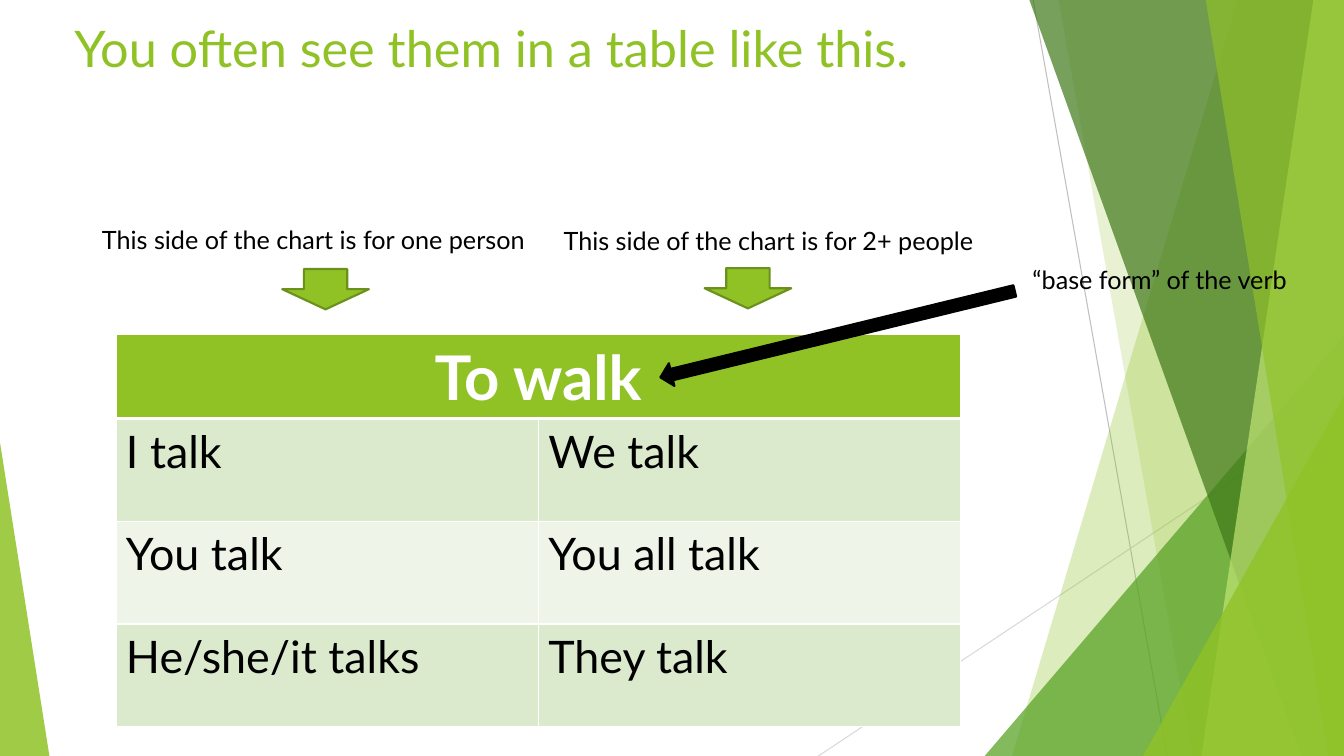
from lxml.etree import SubElement
from pptx import Presentation
from pptx.dml.color import RGBColor
from pptx.enum.shapes import MSO_CONNECTOR, MSO_SHAPE
from pptx.enum.text import PP_ALIGN
from pptx.oxml.ns import qn
from pptx.util import Pt

WHITE = RGBColor(0xFF, 0xFF, 0xFF)
BLACK = RGBColor(0, 0, 0)
LIME = RGBColor(0x90, 0xC2, 0x26)
PALE_LIME = RGBColor(0xC0, 0xE4, 0x74)
GREEN = RGBColor(0x54, 0xA0, 0x21)
DARK = RGBColor(0x3F, 0x78, 0x19)
EDGE = RGBColor(0x6B, 0x90, 0x1C)
BAND = RGBColor(0xDB, 0xE9, 0xCD)
LIGHT = RGBColor(0xEE, 0xF4, 0xE8)
GRAY = RGBColor(0xBF, 0xBF, 0xBF)
SILVER = RGBColor(0xD9, 0xD9, 0xD9)

FONT = "Lato"
WIDE, HIGH = 960, 540
TOP = -0.6  # the facets start just above the slide

TITLE = "You often see them in a table like this."
VERB = "To walk"
FORMS = [
    ("I talk", "We talk"),
    ("You talk", "You all talk"),
    ("He/she/it talks", "They talk"),
]
TABLE_X, TABLE_Y, COL_W, HEAD_H, ROW_H = 82.8, 239, 301.7, 60, 73.4

# text, left, top, width
LABELS = [
    ("“base form” of the verb", 722.9, 185, 211),
    ("This side of the chart is for one person", 59, 157, 329.8),
    ("This side of the chart is for 2+ people", 388.8, 157.7, 320.4),
]
# preset, left, top, width, height, turn, fill, line
ARROWS = [
    (MSO_SHAPE.LEFT_ARROW, 468, 230.4, 260.6, 16.6, -13.7, BLACK, BLACK),
    (MSO_SHAPE.DOWN_ARROW, 503.3, 191.5, 61.9, 28.8, 0, LIME, EDGE),
    (MSO_SHAPE.DOWN_ARROW, 201.6, 192.2, 61.9, 28.8, 0, LIME, EDGE),
]
RAYS = [(738, 0, 833.8, HIGH, GRAY), (WIDE, 290.2, 584.6, HIGH, SILVER)]
# Back to front. Facet: top x, bottom x, colour, opacity (reaches the right edge).
# Triangle: left, top, width, apex, colour, opacity (reaches the bottom edge).
DECOR = [
    (884.2, 722.9, LIME, 30),
    (756, 851.8, LIME, 20),
    (703.4, 239.8, 256.6, 1, GREEN, 72),
    (735.1, 929.5, DARK, 70),
    (938.2, 858.2, PALE_LIME, 70),
    (861.1, 949, LIME, 65),
    (816.5, 283, 143.5, 1, LIME, 80),
    (0, 316.1, 35.3, 0, LIME, 85),
]


def paint(shape, color, alpha=100):
    shape.shadow.inherit = False
    shape.fill.solid()
    shape.fill.fore_color.rgb = color
    if alpha < 100:
        tint = shape.fill._xPr.find(qn("a:solidFill"))[0]
        SubElement(tint, qn("a:alpha"), val=str(alpha * 1000))


def facet(top_x, low_x, color, alpha):
    pen = shapes.build_freeform(Pt(top_x), Pt(TOP))
    pen.add_line_segments(
        [(Pt(x), Pt(y)) for x, y in [(WIDE, TOP), (WIDE, HIGH), (low_x, HIGH)]])
    shape = pen.convert_to_shape()
    paint(shape, color, alpha)
    shape.line.fill.background()


def corner(x, y, w, apex, color, alpha):
    shape = shapes.add_shape(
        MSO_SHAPE.ISOSCELES_TRIANGLE, Pt(x), Pt(y), Pt(w), Pt(HIGH - y))
    shape.adjustments[0] = apex
    paint(shape, color, alpha)
    shape.line.fill.background()


def write(frame, text, size, color, align=PP_ALIGN.LEFT, bold=False):
    para = frame.paragraphs[0]
    para.text = text
    para.alignment = align
    font = para.font
    font.name, font.size, font.bold = FONT, Pt(size), bold
    font.color.rgb = color


def add_text(text, x, y, w, h, size, color, align, wrap):
    frame = shapes.add_textbox(Pt(x), Pt(y), Pt(w), Pt(h)).text_frame
    frame.word_wrap = wrap
    write(frame, text, size, color, align)


def style(cell, fill, top, bottom):
    """Give a cell white borders, then its fill."""
    props = cell._tc.get_or_add_tcPr()
    for side, width in [("L", 1), ("R", 1), ("T", top), ("B", bottom)]:
        line = SubElement(props, qn("a:ln" + side), w=str(Pt(width)))
        SubElement(SubElement(line, qn("a:solidFill")), qn("a:srgbClr"), val=str(WHITE))
    cell.fill.solid()
    cell.fill.fore_color.rgb = fill


def add_forms():
    rows = len(FORMS) + 1
    table = shapes.add_table(
        rows, 2, Pt(TABLE_X), Pt(TABLE_Y), Pt(2 * COL_W),
        Pt(HEAD_H + len(FORMS) * ROW_H)).table
    table.horz_banding = False
    for col in table.columns:
        col.width = Pt(COL_W)
    for r, row in enumerate(table.rows):
        row.height = Pt(ROW_H if r else HEAD_H)
        fill = (BAND if r % 2 else LIGHT) if r else LIME
        for c, cell in enumerate(row.cells):
            style(cell, fill, 3 if r == 1 else 1, 1 if r else 3)
            if r:
                write(cell.text_frame, FORMS[r - 1][c], 32, BLACK)
    head = table.cell(0, 0)
    head.merge(table.cell(0, 1))
    write(head.text_frame, VERB, 44, WHITE, PP_ALIGN.CENTER, True)


deck = Presentation()
deck.slide_width, deck.slide_height = Pt(WIDE), Pt(HIGH)
slide = deck.slides.add_slide(deck.slide_layouts[6])
shapes = slide.shapes

for x1, y1, x2, y2, color in RAYS:
    ray = shapes.add_connector(MSO_CONNECTOR.STRAIGHT, Pt(x1), Pt(y1), Pt(x2), Pt(y2))
    ray.line.color.rgb = color
    ray.line.width = Pt(0.75)
    SubElement(ray._element.spPr, qn("a:effectLst"))
for part in DECOR:
    (facet if len(part) == 4 else corner)(*part)

add_text(TITLE, 46, 8.6, 676.8, 103.7, 36, LIME, PP_ALIGN.LEFT, True)
add_forms()
for text, x, y, w in LABELS:
    add_text(text, x, y, w, 28.8, 18, BLACK, PP_ALIGN.CENTER, False)
for kind, x, y, w, h, turn, fill, edge in ARROWS:
    arrow = shapes.add_shape(kind, Pt(x), Pt(y), Pt(w), Pt(h))
    arrow.rotation = turn
    paint(arrow, fill)
    arrow.line.color.rgb = edge
    arrow.line.width = Pt(1.5)

deck.save("out.pptx")
